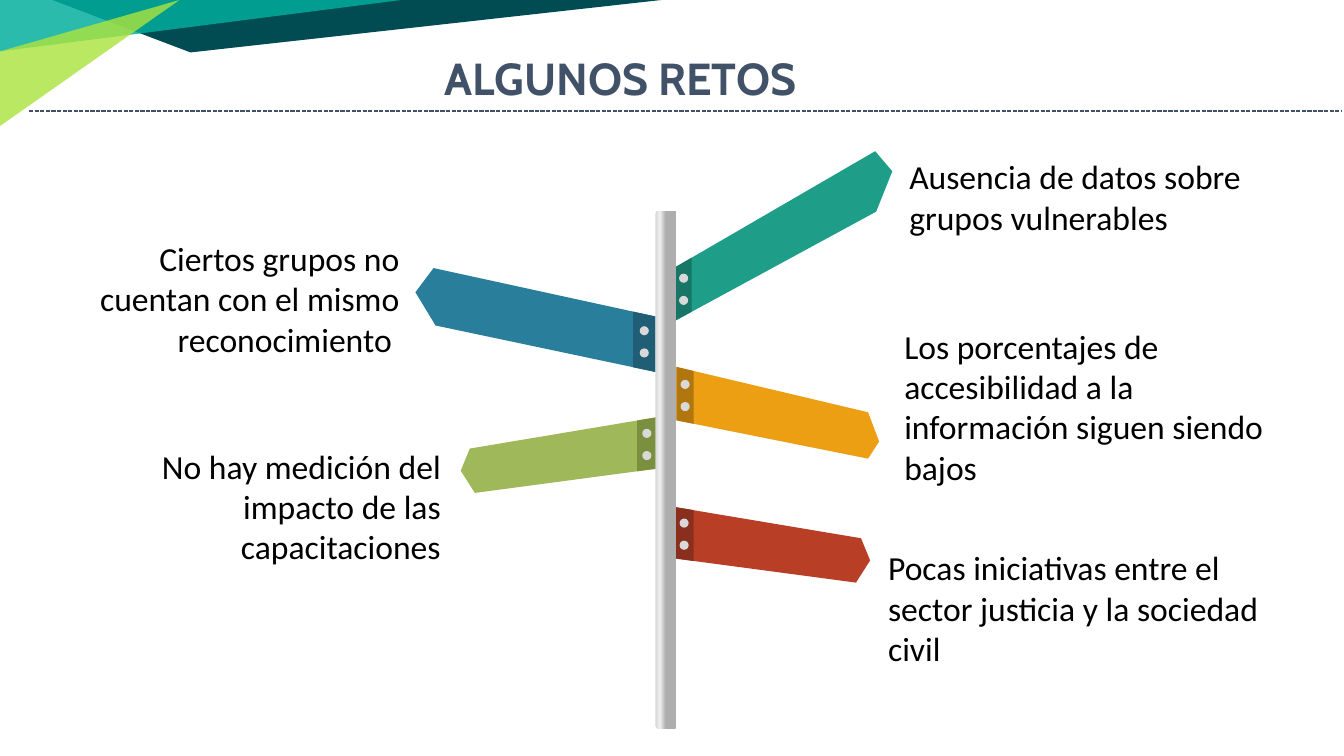
from copy import deepcopy

from lxml import etree
from pptx import Presentation, util as u
from pptx.dml.color import RGBColor
from pptx.enum import dml, shapes, text
from pptx.oxml.ns import qn

WIDE, HIGH = 13.33, 7.5
INK = "415168"
RIGHT, LEFT = 1, -1
BOLT, PITCH = 0.09, 0.22  # bolt diameter and distance between bolts

# Planks run from the post outwards: (out, down) in inches
STEEP = [(0, 1.15), (1.98, 0), (2.15, 0.2), (1.99, 0.6), (0, 1.68)]
RISING = [(0, 0.48), (2.2, 0), (2.38, 0.24), (2.18, 0.57), (0, 1.03)]
FALLING = [(0, 0), (1.9, 0.45), (2.01, 0.74), (1.9, 0.91), (0, 0.53)]
GENTLE = [(0, 0), (1.85, 0.31), (1.94, 0.53), (1.8, 0.75), (0, 0.51)]

# side, root on the post, plank, bracket width, plank and bracket colours,
# label box, label
SIGNS = [
    (LEFT, (6.5, 2.66), RISING, 0.22, "297E9B", "1F5E74",
     (0.33, 2.31, 3.73, 1.31),
     "Ciertos grupos no cuentan con el mismo reconocimiento "),
    (RIGHT, (6.7, 1.5), STEEP, 0.16, "1E9D88", "177666",
     (8.92, 1.5, 3.73, 0.91),
     "Ausencia de datos sobre grupos vulnerables"),
    (RIGHT, (6.71, 3.64), FALLING, 0.17, "EC9F13", "B1770E",
     (8.87, 3.18, 4.15, 1.72),
     "Los porcentajes de accesibilidad a la información siguen siendo bajos"),
    (LEFT, (6.51, 4.14), GENTLE, 0.19, "9FB85A", "7A903E",
     (0.74, 4.37, 3.73, 1.31),
     "No hay medición del impacto de las capacitaciones"),
    (RIGHT, (6.69, 5.03), GENTLE, 0.19, "B83E26", "8A2F1D",
     (8.71, 5.38, 4.18, 1.31),
     "Pocas iniciativas entre el sector justicia y la sociedad civil"),
]


def rgb(code):
    return RGBColor.from_string(code)


def inches(vals):
    return [u.Inches(v) for v in vals]


def paint(shape, color, alpha=None):
    """Fill a shape flat, without line or shadow; alpha is a percentage."""
    shape.shadow.inherit = False
    shape.line.fill.background()
    shape.fill.solid()
    shape.fill.fore_color.rgb = rgb(color)
    if alpha:
        tint = shape._element.spPr.find(".//" + qn("a:srgbClr"))
        etree.SubElement(tint, qn("a:alpha"), val=str(alpha * 1000))


def outline(slide, points, color, alpha=None):
    first, *rest = [inches(p) for p in points]
    pen = slide.shapes.build_freeform(*first)
    pen.add_line_segments(rest, close=True)
    paint(pen.convert_to_shape(), color, alpha)


def write(shape, words, font="Calibri", size=24, color="000000", bold=False,
          align=text.PP_ALIGN.LEFT):
    frame = shape.text_frame
    frame.word_wrap = True
    par = frame.paragraphs[0]
    par.alignment = align
    run = par.add_run()
    run.text = words
    run.font.name, run.font.size, run.font.bold = font, u.Pt(size), bold
    run.font.color.rgb = rgb(color)


def header(slide, box):
    left, top, wide, high = box
    title = slide.shapes.title
    title.left, title.top, title.width, title.height = inches(
        (left + 4.31, top + 0.45, wide - 4.31, 0.64))
    write(title, "ALGUNOS RETOS", font="Cabin", size=32, color=INK, bold=True)

    base = top + high
    rule = slide.shapes.add_connector(
        shapes.MSO_CONNECTOR.STRAIGHT,
        *inches((left + 0.29, base, left + wide - 0.02, base)))
    rule.line.color.rgb = rgb(INK)
    rule.line.width = u.Pt(1)
    rule.line.dash_style = dml.MSO_LINE.SQUARE_DOT
    etree.SubElement(rule._element.spPr, qn("a:effectLst"))


def corner(slide, left, top):
    """Three overlapping triangles in the corner of the slide."""
    for points, color, alpha in (
        ([(6.56, 0), (0.52, 0), (1.89, 0.52)], "004C52", None),
        ([(0, 0.51), (0, 0), (3.98, 0)], "00AE9D", 83),
        ([(0, 0.51), (0, 1.25), (1.78, 0)], "ABE33F", 81),
    ):
        outline(slide, [(left + x, top + y) for x, y in points], color, alpha)


def sign(slide, side, root, plank, grip, color, dark):
    """A plank with a bracket and two bolts, fixed to the post at root."""

    def place(out, down):
        return root[0] + side * out, root[1] + down

    def edge(start, end):
        """Height of a plank edge where the bracket stops."""
        return start[1] + (end[1] - start[1]) * grip / end[0]

    high, low = plank[0], plank[-1]
    inner = edge(high, plank[1]), edge(low, plank[-2])
    bracket = [high, (grip, inner[0]), (grip, inner[1]), low]
    outline(slide, [place(*p) for p in plank], color)
    outline(slide, [place(*p) for p in bracket], dark)

    x, y = place(grip / 2, sum(p[1] for p in bracket) / 4)
    for shift in (-PITCH / 2, PITCH / 2):
        bolt = slide.shapes.add_shape(
            shapes.MSO_SHAPE.OVAL,
            *inches((x - BOLT / 2, y + shift - BOLT / 2, BOLT, BOLT)))
        paint(bolt, "D9D9D9")


def post(slide, box):
    pole = slide.shapes.add_shape(
        shapes.MSO_SHAPE.ROUNDED_RECTANGLE, *inches(box))
    paint(pole, "AEAEAE")
    pole.fill.gradient()
    pole.fill.gradient_angle = 0
    stops = pole._element.spPr.find(".//" + qn("a:gsLst"))
    stops.append(deepcopy(stops[-1]))
    shades = ((0, "D6D6D6"), (0.22, "EFEFEF"), (0.5, "AEAEAE"))
    for stop, (spot, color) in zip(pole.fill.gradient_stops, shades):
        stop.position = spot
        stop.color.rgb = rgb(color)


def label(slide, box, words, side):
    note = slide.shapes.add_textbox(*inches(box))
    align = text.PP_ALIGN.LEFT if side == RIGHT else text.PP_ALIGN.RIGHT
    write(note, words, align=align)


def main():
    deck = Presentation()
    deck.slide_width, deck.slide_height = inches((WIDE, HIGH))
    slide = deck.slides.add_slide(deck.slide_layouts[5])
    header(slide, (0, 0, WIDE, 1.1))
    corner(slide, 0, 0)
    for side, root, plank, grip, color, dark, box, words in SIGNS:
        sign(slide, side, root, plank, grip, color, dark)
        label(slide, box, words, side)
    post(slide, (6.5, 2.09, 0.21, 5.14))
    deck.save("out.pptx")


if __name__ == "__main__":
    main()
